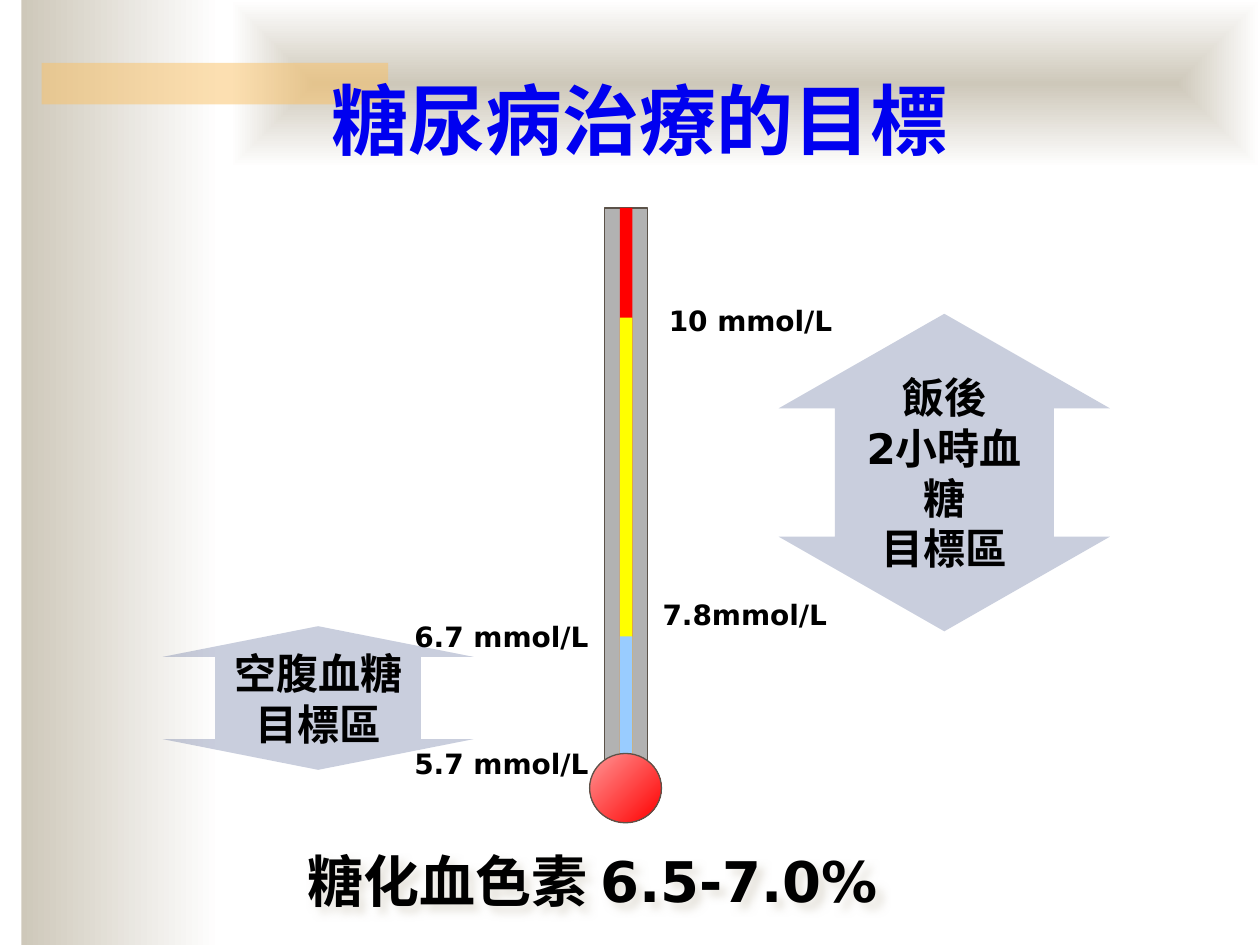
from lxml import etree
from pptx import Presentation
from pptx.dml.color import RGBColor
from pptx.enum.shapes import MSO_SHAPE
from pptx.enum.text import MSO_ANCHOR, PP_ALIGN
from pptx.oxml import parse_xml
from pptx.oxml.ns import qn
from pptx.util import Inches, Pt

NS = 'xmlns:a="http://schemas.openxmlformats.org/drawingml/2006/main"'
HEX = {"sand": "CEC8BA", "white": "FFFFFF", "amber": "FAC164", "title": "0000F0",
       "grey": "B2B2B2", "edge": "5B5249", "red": "FF0000", "yellow": "FFFF00",
       "sky": "99CCFF", "pink": "FF9696", "navy": "2A3D7A", "black": "000000"}
TITLE = "糖尿病治療的目標"
FOOT = "糖化血色素 6.5-7.0%"
BASE = 6.04
BANDS = [(1.65, "red"), (2.52, "yellow"), (5.05, "sky")]
LABELS = [("7.8mmol/L", 5.16, 4.69, 1.61), ("6.7 mmol/L", 3.19, 4.87, 1.68),
          ("10 mmol/L", 5.21, 2.36, 1.6), ("5.7 mmol/L", 3.19, 5.88, 1.68)]
SHAFT = 66100
ZONES = [(["空腹血糖", "目標區"], (1.29, 4.97, 2.47, 1.14), 21400),
         (["飯後", "2小時血糖", "目標區"], (6.18, 2.49, 2.63, 2.52), 29800)]


def color(name):
    return RGBColor.from_string(HEX[name])


def draw(shapes, kind, box, fill=None, alpha=None, line=None):
    shape = shapes.add_shape(kind, *map(Inches, box))
    shape.shadow.inherit = False
    if fill:
        shape.fill.solid()
        shape.fill.fore_color.rgb = color(fill)
    if alpha:
        tint = shape.fill._xPr.find(".//" + qn("a:srgbClr"))
        etree.SubElement(tint, qn("a:alpha"), val=str(alpha * 1000))
    if line:
        shape.line.color.rgb = color(line)
        shape.line.width = Pt(0.75)
    else:
        shape.line.fill.background()
    return shape


def blend(shape, first, last, angle=0):
    shape.fill.gradient()
    shape.fill.gradient_angle = angle
    for stop, name in zip(shape.fill.gradient_stops, (first, last)):
        stop.color.rgb = color(name)


def bend(shape, *values):
    guides = shape.element.spPr.find(".//" + qn("a:avLst"))
    for guide in list(guides):
        guides.remove(guide)
    for num, value in enumerate(values, 1):
        etree.SubElement(guides, qn("a:gd"), name=f"adj{num}", fmla=f"val {value}")


def write(shape, lines, size, align=PP_ALIGN.CENTER, font="DejaVu Sans",
          hue="black", anchor=MSO_ANCHOR.TOP, wrap=True):
    frame = shape.text_frame
    frame.word_wrap = wrap
    frame.vertical_anchor = anchor
    frame.text = "\n".join(lines)
    for para in frame.paragraphs:
        para.alignment = align
        para.font.size = Pt(size)
        para.font.name = font
        para.font.bold = True
        para.font.color.rgb = color(hue)


def main():
    """Build the slide on blood sugar targets."""
    deck = Presentation()
    deck.slide_width, deck.slide_height = Inches(10), Inches(7.5)
    shapes = deck.slides.add_slide(deck.slide_layouts[6]).shapes

    side = draw(shapes, MSO_SHAPE.RECTANGLE, (0.17, 0, 1.58, 7.5))
    blend(side, "sand", "white")
    top = draw(shapes, MSO_SHAPE.RECTANGLE, (1.83, 0, 8.17, 1.33))
    blend(top, "sand", "white")
    ramp = top.fill._xPr.find(".//" + qn("a:lin"))
    ramp.getparent().replace(ramp, parse_xml(
        f'<a:path {NS} path="shape"><a:fillToRect l="50000" t="50000" '
        'r="50000" b="50000"/></a:path>'))
    draw(shapes, MSO_SHAPE.RECTANGLE, (0.33, 0.5, 2.75, 0.33), "amber", 50)

    head = shapes.add_textbox(*map(Inches, (0.83, 0.51, 8.5, 0.85)))
    write(head, [TITLE], 44, font="Times New Roman", hue="title",
          anchor=MSO_ANCHOR.BOTTOM)

    gauge = shapes.add_group_shape().shapes
    start = BANDS[0][0]
    draw(gauge, MSO_SHAPE.RECTANGLE, (4.8, start, 0.34, BASE - start),
         "grey", line="edge")
    for y, name in BANDS:
        draw(gauge, MSO_SHAPE.RECTANGLE, (4.92, y, 0.1, BASE - y), name)
    bulb = draw(gauge, MSO_SHAPE.OVAL, (4.68, 5.98, 0.57, 0.55), line="edge")
    blend(bulb, "pink", "red", 315)
    for text, x, y, width in LABELS:
        label = gauge.add_textbox(*map(Inches, (x, y, width, 0.37)))
        write(label, [text], 16, PP_ALIGN.LEFT, wrap=False)
    for lines, box, tip in ZONES:
        zone = draw(gauge, MSO_SHAPE.UP_DOWN_ARROW, box, "navy", 25)
        bend(zone, SHAFT, tip)
        write(zone, lines, 24, anchor=MSO_ANCHOR.MIDDLE)

    foot = shapes.add_textbox(*map(Inches, (2.08, 6.67, 5.25, 0.63)))
    write(foot, [FOOT], 32)
    foot.element.spPr.append(parse_xml(
        f'<a:effectLst {NS}><a:outerShdw blurRad="63500" dist="50800" '
        f'dir="2700000"><a:srgbClr val="{HEX["sand"]}"><a:alpha val="50000"/>'
        '</a:srgbClr></a:outerShdw></a:effectLst>'))

    deck.save("out.pptx")


if __name__ == "__main__":
    main()
